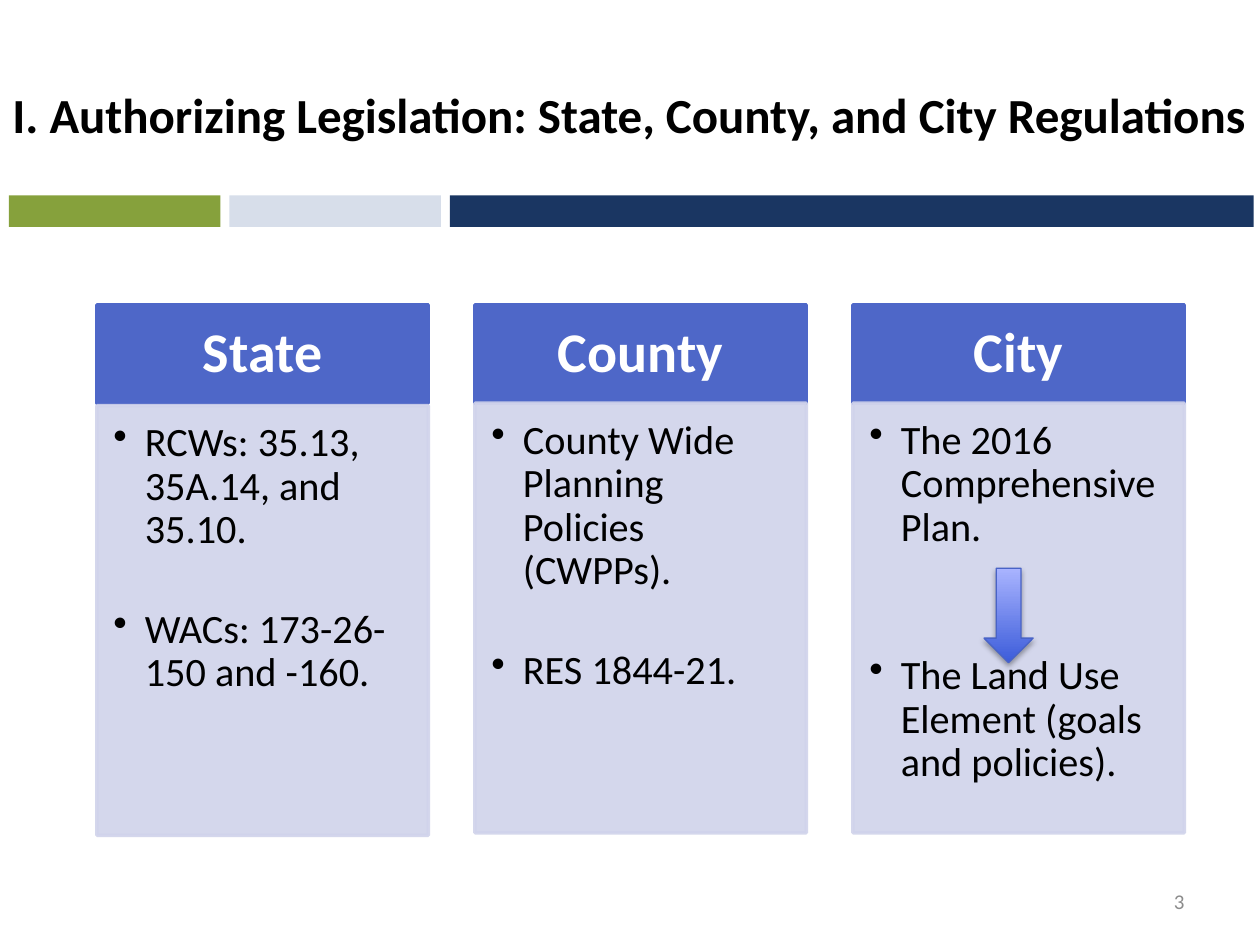
from lxml import etree
from pptx import Presentation
from pptx.dml.color import RGBColor
from pptx.enum.shapes import MSO_SHAPE
from pptx.enum.text import MSO_ANCHOR, PP_ALIGN
from pptx.oxml import parse_xml
from pptx.oxml.ns import nsdecls, qn
from pptx.util import Inches, Pt

RECTANGLE, DOWN_ARROW = MSO_SHAPE.RECTANGLE, MSO_SHAPE.DOWN_ARROW
TOP, MIDDLE = MSO_ANCHOR.TOP, MSO_ANCHOR.MIDDLE
LEFT, CENTER, RIGHT = PP_ALIGN.LEFT, PP_ALIGN.CENTER, PP_ALIGN.RIGHT

FONT = "Calibri"
BLACK = RGBColor(0x00, 0x00, 0x00)
WHITE = RGBColor(0xFF, 0xFF, 0xFF)
GRAY = RGBColor(0x8C, 0x8C, 0x8C)
GREEN = RGBColor(0x86, 0xA1, 0x3C)
PALE_BLUE = RGBColor(0xD7, 0xDE, 0xEA)
NAVY = RGBColor(0x1A, 0x36, 0x62)
HEADING_BLUE = RGBColor(0x4E, 0x67, 0xC8)
LAVENDER = RGBColor(0xD0, 0xD3, 0xEB)
ARROW_DARK = RGBColor(0x3C, 0x5C, 0xDA)
ARROW_LIGHT = RGBColor(0xA9, 0xB4, 0xFF)
ARROW_LINE = RGBColor(0x49, 0x63, 0xC7)

SLIDE_WIDTH, SLIDE_HEIGHT = 10, 7.5
BAND_LEFT, BAND_TOP, BAND_HEIGHT, BAND_GAP = 0.07, 1.55, 0.25, 0.07
BANDS = [(GREEN, 1.68), (PALE_BLUE, 1.68), (NAVY, 6.38)]

COLUMN_LEFT, COLUMN_PITCH, COLUMN_WIDTH = 0.77, 3, 2.63
HEADING_TOP, HEADING_HEIGHT, BODY_HEIGHT = 2.42, 0.78, 3.41
# Heading, body top, points between the bullets, bullets
COLUMNS = [
    ("State", 3.22, 32,
     ["RCWs: 35.13, 35A.14, and 35.10.", "WACs: 173-26-150 and -160."]),
    ("County", 3.2, 32,
     ["County Wide Planning Policies (CWPPs).", "RES 1844-21."]),
    ("City", 3.2, 60,
     ["The 2016 Comprehensive Plan.",
      "The Land Use Element (goals and policies)."]),
]


def add_block(page, kind, left, top, width, height):
    block = page.shapes.add_shape(
        kind, Inches(left), Inches(top), Inches(width), Inches(height))
    block.shadow.inherit = False
    return block


def add_panel(page, left, top, width, height, color, line_width=0):
    panel = add_block(page, RECTANGLE, left, top, width, height)
    panel.fill.solid()
    panel.fill.fore_color.rgb = color
    if line_width:
        panel.line.color.rgb = color
        panel.line.width = Pt(line_width)
    else:
        panel.line.fill.background()
    return panel


def set_opacity(shape, percent):
    """Apply one opacity to the fill and the outline."""
    for color in shape._element.spPr.iter(qn("a:srgbClr")):
        etree.SubElement(color, qn("a:alpha"), val=str(percent * 1000))


def set_frame(shape, anchor, insets=(0.1, 0.05, 0.1, 0.05)):
    frame = shape.text_frame
    frame.word_wrap = True
    frame.vertical_anchor = anchor
    (frame.margin_left, frame.margin_top,
     frame.margin_right, frame.margin_bottom) = map(Inches, insets)
    return frame


def set_text(para, text, size, color, align=LEFT, bold=False):
    para.text = text
    para.alignment = align
    font = para.font
    font.name, font.size, font.bold = FONT, Pt(size), bold
    font.color.rgb = color


def add_label(page, left, top, width, height, anchor, *style):
    box = page.shapes.add_textbox(
        Inches(left), Inches(top), Inches(width), Inches(height))
    set_text(set_frame(box, anchor).paragraphs[0], *style)


def set_bullet(para):
    properties = para._p.get_or_add_pPr()
    indent = Inches(0.25)
    properties.set("marL", str(indent))
    properties.set("indent", str(-indent))
    bullet = parse_xml(f'<a:buChar {nsdecls("a")} char="•"/>')
    properties.insert_element_before(bullet, "a:tabLst", "a:defRPr", "a:extLst")


def add_bands(page):
    left = BAND_LEFT
    for color, width in BANDS:
        add_panel(page, left, BAND_TOP, width, BAND_HEIGHT, color)
        left += width + BAND_GAP


def add_column(page, left, heading, body_top, gap, bullets):
    header = add_panel(page, left, HEADING_TOP, COLUMN_WIDTH, HEADING_HEIGHT,
                       HEADING_BLUE, 2)
    frame = set_frame(header, MIDDLE, (0.25, 0.14, 0.25, 0.14))
    set_text(frame.paragraphs[0], heading, 32, WHITE, CENTER, True)
    frame.paragraphs[0].line_spacing = 0.9

    body = add_panel(page, left, body_top, COLUMN_WIDTH, BODY_HEIGHT,
                     LAVENDER, 2)
    set_opacity(body, 90)
    frame = set_frame(body, TOP, (0.13, 0.13, 0.18, 0.2))
    for index, bullet in enumerate(bullets):
        para = frame.add_paragraph() if index else frame.paragraphs[0]
        set_text(para, bullet, 23, BLACK)
        para.line_spacing = 0.9
        para.space_before = Pt(gap if index else 0)
        set_bullet(para)


def add_arrow(page, left, top, width, height):
    arrow = add_block(page, DOWN_ARROW, left, top, width, height)
    arrow.fill.gradient()
    arrow.fill.gradient_angle = 90
    for stop, color in zip(arrow.fill.gradient_stops, (ARROW_DARK, ARROW_LIGHT)):
        stop.color.rgb = color
    arrow.line.color.rgb = ARROW_LINE
    arrow.line.width = Pt(0.75)
    effects = arrow._element.spPr.find(qn("a:effectLst"))
    effects.append(parse_xml(
        f'<a:outerShdw {nsdecls("a")} blurRad="{Pt(3.1)}" dist="{Pt(1.8)}" '
        'dir="5400000" rotWithShape="0"><a:srgbClr val="000000">'
        '<a:alpha val="35000"/></a:srgbClr></a:outerShdw>'))


def main():
    deck = Presentation()
    deck.slide_width = Inches(SLIDE_WIDTH)
    deck.slide_height = Inches(SLIDE_HEIGHT)
    page = deck.slides.add_slide(deck.slide_layouts[6])

    add_bands(page)
    add_label(page, 7.17, 6.95, 2.33, 0.4, MIDDLE, "3", 12, GRAY, RIGHT)
    add_label(page, 0, 0.62, SLIDE_WIDTH, 1.04, TOP,
              "I. Authorizing Legislation: State, County, and City Regulations",
              28, BLACK, LEFT, True)
    for index, column in enumerate(COLUMNS):
        add_column(page, COLUMN_LEFT + index * COLUMN_PITCH, *column)
    add_arrow(page, 7.81, 4.51, 0.39, 0.75)

    deck.save("out.pptx")


if __name__ == "__main__":
    main()
